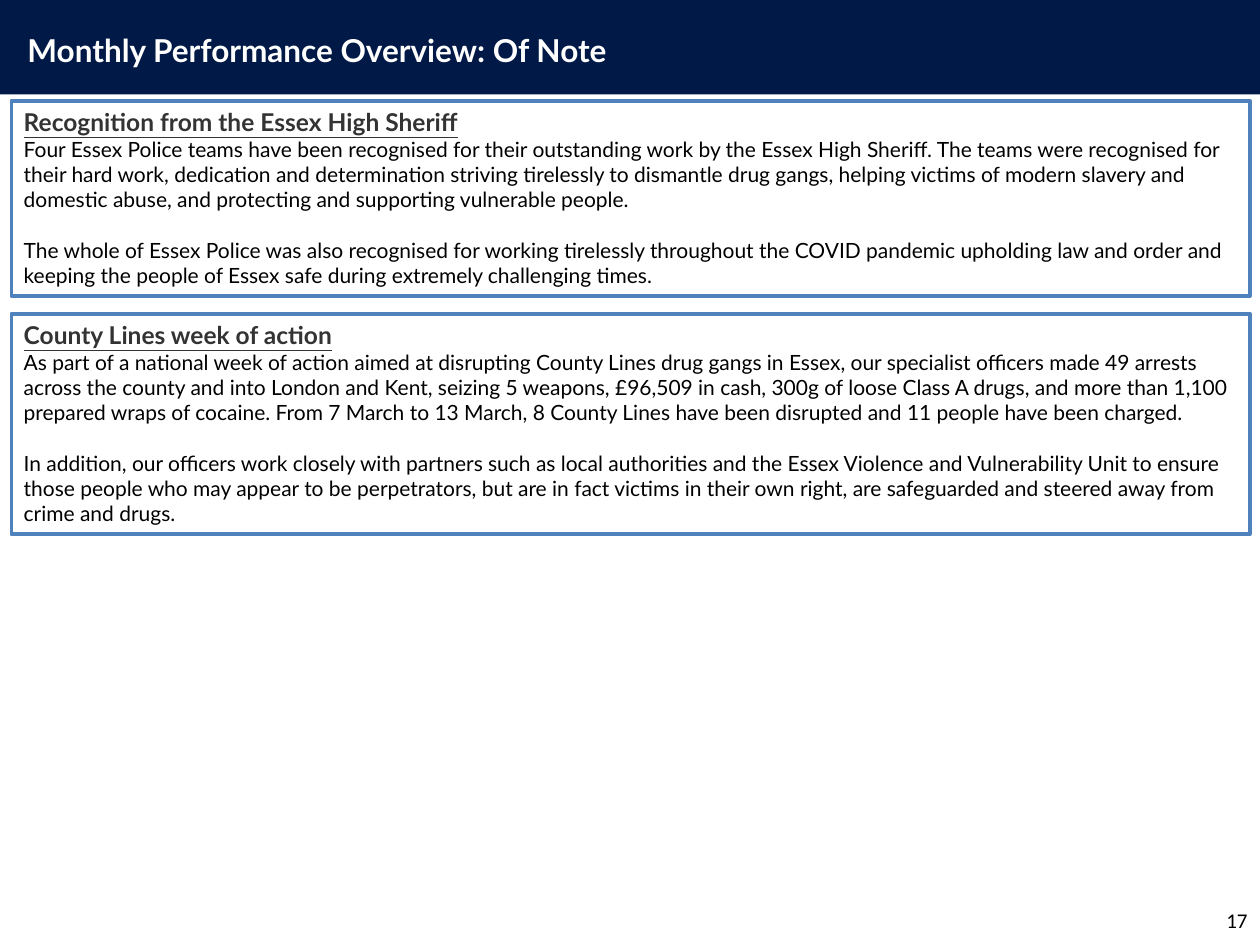
from pptx import Presentation
from pptx.dml.color import RGBColor
from pptx.enum.shapes import MSO_SHAPE
from pptx.enum.text import MSO_ANCHOR, PP_ALIGN
from pptx.util import Inches, Pt

NAVY = RGBColor(0x00, 0x19, 0x47)
BLUE = RGBColor(0x4F, 0x81, 0xBD)
GREY = RGBColor(0x33, 0x33, 0x33)
BLACK = RGBColor(0, 0, 0)
WHITE = RGBColor(0xFF, 0xFF, 0xFF)

# Top, height, heading, body paragraphs
NEWS = [
    (0.8, 1.55, "Recognition from the Essex High Sheriff", [
        "Four Essex Police teams have been recognised for their outstanding "
        "work by the Essex High Sheriff. The teams were recognised for their "
        "hard work, dedication and determination striving tirelessly to "
        "dismantle drug gangs, helping victims of modern slavery and domestic "
        "abuse, and protecting and supporting vulnerable people.",
        "The whole of Essex Police was also recognised for working tirelessly "
        "throughout the COVID pandemic upholding law and order and keeping "
        "the people of Essex safe during extremely challenging times.",
    ]),
    (2.49, 1.75, "County Lines week of action", [
        "As part of a national week of action aimed at disrupting County "
        "Lines drug gangs in Essex, our specialist officers made 49 arrests "
        "across the county and into London and Kent, seizing 5 weapons, "
        "£96,509 in cash, 300g of loose Class A drugs, and more than 1,100 "
        "prepared wraps of cocaine. From 7 March to 13 March, 8 County Lines "
        "have been disrupted and 11 people have been charged.",
        "In addition, our officers work closely with partners such as local "
        "authorities and the Essex Violence and Vulnerability Unit to ensure "
        "those people who may appear to be perpetrators, but are in fact "
        "victims in their own right, are safeguarded and steered away from "
        "crime and drugs.",
    ]),
]


def write(para, text, size, color, bold=False, line=False, face="Lato"):
    para.text = text
    font = para.runs[0].font
    font.name, font.size, font.bold = face, Pt(size), bold
    font.underline = line
    font.color.rgb = color


def add_rect(slide, left, top, width, height, fill, edge=None):
    rect = slide.shapes.add_shape(
        MSO_SHAPE.RECTANGLE,
        Inches(left), Inches(top), Inches(width), Inches(height))
    rect.shadow.inherit = False
    rect.fill.solid()
    rect.fill.fore_color.rgb = fill
    if edge is None:
        rect.line.fill.background()
    else:
        rect.line.color.rgb = edge
        rect.line.width = Pt(2)
    return rect


def add_label(slide, left, top, width, height):
    box = slide.shapes.add_textbox(
        Inches(left), Inches(top), Inches(width), Inches(height))
    box.text_frame.word_wrap = True
    return box.text_frame


def add_panel(slide, top, height, head, body):
    frame = add_rect(slide, 0.09, top, 9.83, height, WHITE, BLUE).text_frame
    frame.word_wrap = True
    frame.vertical_anchor = MSO_ANCHOR.TOP
    write(frame.paragraphs[0], head, 14, GREY, bold=True, line=True)
    for i, text in enumerate(body):
        para = frame.add_paragraph()
        write(para, text, 12, BLACK)
        if i:
            para.space_before = Pt(14.4)
    for para in frame.paragraphs:
        para.alignment = PP_ALIGN.LEFT


def main():
    deck = Presentation()
    deck.slide_width, deck.slide_height = Inches(10), Inches(7.5)
    slide = deck.slides.add_slide(deck.slide_layouts[6])

    add_rect(slide, 0, 0, 10, 0.75, NAVY)
    title = add_label(slide, 0.12, 0.2, 5.67, 0.4)
    write(title.paragraphs[0], "Monthly Performance Overview: Of Note",
          18, WHITE, bold=True)

    page = add_label(slide, 7.67, 7.1, 2.33, 0.4)
    page.vertical_anchor = MSO_ANCHOR.MIDDLE
    write(page.paragraphs[0], "17", 12, BLACK, face="Calibri")
    page.paragraphs[0].alignment = PP_ALIGN.RIGHT

    for item in NEWS:
        add_panel(slide, *item)
    deck.save("out.pptx")


if __name__ == "__main__":
    main()
